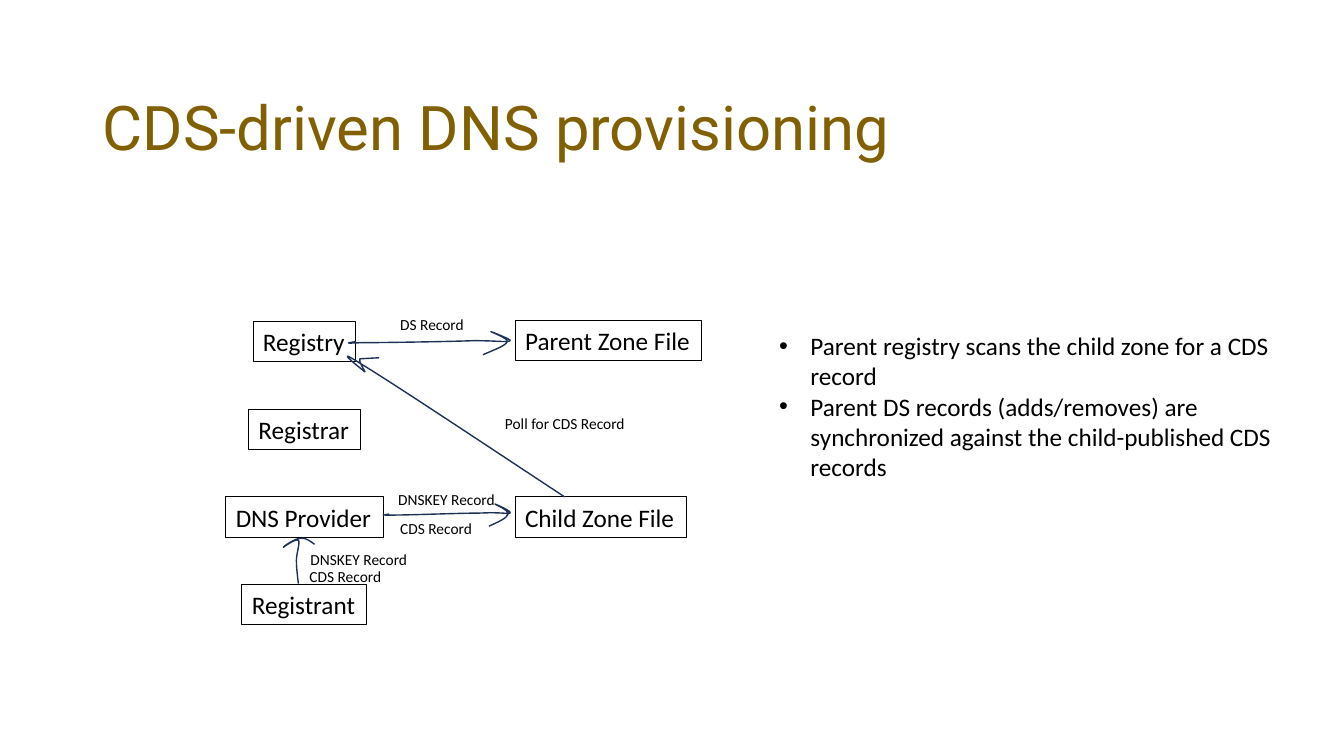
from dataclasses import dataclass

import pptx
import pptx.dml.color
import pptx.enum.shapes
import pptx.enum.text
import pptx.oxml
import pptx.oxml.ns
import pptx.util

COLORS = {"title": "806000", "text": "000000", "border": "000000", "arrow": "1E3256"}
BODY_FONT = "Calibri"
SLIDE_WIDTH, SLIDE_HEIGHT = 13.33, 7.5

# Diagram grid, in inches
FIRST_ROW, ROW_STEP = 3.19, 0.87
ACTOR_CENTER, ZONE_LEFT = 3.02, 5.11
BOX_HEIGHT, LABEL_HEIGHT = 0.4, 0.29
CURVE_STEPS = 12

Point = tuple[float, float]


@dataclass(frozen=True)
class Item:
    text: str
    row: float
    left: float
    width: float


def actor(text: str, row: int, width: float) -> Item:
    """A box centred on the actor column."""
    return Item(text, row, ACTOR_CENTER - width / 2, width)


BOXES = [
    Item("Parent Zone File", -0.01, ZONE_LEFT, 1.85),
    actor("Registry", 0, 1.02),
    actor("Registrar", 1, 1.11),
    actor("DNS Provider", 2, 1.56),
    actor("Registrant", 3, 1.24),
    Item("Child Zone File", 2, ZONE_LEFT, 1.7),
]

LABELS = [
    Item("DNSKEY Record", 1.87, 3.85, 1.17),
    Item("DNSKEY Record", 2.55, 2.98, 1.17),
    Item("CDS Record", 2.74, 2.97, 0.93),
    Item("CDS Record", 2.2, 3.87, 0.93),
    Item("Poll for CDS Record", 1, 4.91, 1.41),
    Item("DS Record", -0.13, 3.87, 0.84),
]

# Hand-drawn arrows: a start point, then three Bezier points per curve
ARROWS: list[list[Point]] = [
    [  # Registrant to DNS Provider
        (2.96, 5.79),
        (2.95, 5.71), (2.94, 5.63), (2.94, 5.56),
        (2.94, 5.49), (2.98, 5.38), (2.96, 5.36),
        (2.93, 5.34), (2.81, 5.43), (2.81, 5.43),
        (2.81, 5.42), (2.93, 5.34), (2.98, 5.34),
        (3.03, 5.33), (3.08, 5.37), (3.12, 5.4),
    ],
    [  # DNS Provider to Child Zone File
        (3.86, 5.1),
        (3.8, 5.11), (3.75, 5.11), (3.9, 5.11),
        (4.06, 5.11), (4.58, 5.09), (4.77, 5.09),
        (4.97, 5.08), (5.03, 5.1), (5.06, 5.09),
        (5.08, 5.07), (4.91, 5), (4.91, 5),
        (4.9, 5), (5.05, 5.06), (5.04, 5.1),
        (5.03, 5.14), (4.94, 5.18), (4.85, 5.22),
    ],
    [  # Child Zone File to Registry
        (3.76, 3.55),
        (3.76, 3.55), (3.57, 3.56), (3.57, 3.56),
        (3.55, 3.58), (3.62, 3.68), (3.62, 3.69),
        (3.62, 3.69), (3.25, 3.4), (3.58, 3.61),
        (3.91, 3.81), (4.75, 4.37), (5.6, 4.93),
    ],
    [  # Registry to Parent Zone File
        (3.53, 3.39),
        (3.46, 3.4), (3.39, 3.41), (3.58, 3.4),
        (3.78, 3.4), (4.45, 3.39), (4.7, 3.38),
        (4.94, 3.38), (5.03, 3.4), (5.06, 3.38),
        (5.08, 3.37), (4.87, 3.29), (4.87, 3.29),
        (4.86, 3.29), (5.05, 3.36), (5.03, 3.39),
        (5.02, 3.43), (4.9, 3.47), (4.79, 3.52),
    ],
]

BULLETS = [
    "Parent registry scans the child zone for a CDS record",
    "Parent DS records (adds/removes) are synchronized against the child-published CDS records",
]


def color(name: str) -> pptx.dml.color.RGBColor:
    return pptx.dml.color.RGBColor.from_string(COLORS[name])


def inches(*lengths: float) -> list[pptx.util.Length]:
    return [pptx.util.Inches(length) for length in lengths]


def element(markup: str):
    """Parse one drawing element such as 'buChar char="•"'."""
    tag, _, rest = markup.partition(" ")
    return pptx.oxml.parse_xml(f"<a:{tag} {pptx.oxml.ns.nsdecls('a')} {rest}/>")


def row_top(row: float) -> float:
    return FIRST_ROW + row * ROW_STEP


def format_paragraph(paragraph, size: float, font: str = BODY_FONT, fill: str = "text") -> None:
    paragraph.alignment = pptx.enum.text.PP_ALIGN.LEFT
    paragraph.font.size = pptx.util.Pt(size)
    paragraph.font.name = font
    paragraph.font.color.rgb = color(fill)


def write_line(shape, text: str, size: float) -> None:
    frame = shape.text_frame
    frame.text = text
    frame.word_wrap = False
    frame.auto_size = pptx.enum.text.MSO_AUTO_SIZE.SHAPE_TO_FIT_TEXT
    frame.vertical_anchor = pptx.enum.text.MSO_ANCHOR.TOP
    format_paragraph(frame.paragraphs[0], size)


def outline(shape, line: str, width: float) -> None:
    shape.shadow.inherit = False
    shape.fill.background()
    shape.line.color.rgb = color(line)
    shape.line.width = pptx.util.Pt(width)


def add_title(slide, text: str) -> None:
    title = slide.shapes.title
    title.left, title.top, title.width, title.height = inches(0.92, 0.57, 11.5, 1.45)
    frame = title.text_frame
    frame.text = text
    frame.auto_size = pptx.enum.text.MSO_AUTO_SIZE.NONE
    frame.vertical_anchor = pptx.enum.text.MSO_ANCHOR.MIDDLE
    format_paragraph(frame.paragraphs[0], 44, "Roboto", "title")
    frame.paragraphs[0].line_spacing = 0.9


def add_box(slide, item: Item) -> None:
    frame = inches(item.left, row_top(item.row), item.width, BOX_HEIGHT)
    box = slide.shapes.add_shape(pptx.enum.shapes.MSO_SHAPE.RECTANGLE, *frame)
    outline(box, "border", 0.75)
    write_line(box, item.text, 18)


def add_label(slide, item: Item) -> None:
    frame = inches(item.left, row_top(item.row), item.width, LABEL_HEIGHT)
    write_line(slide.shapes.add_textbox(*frame), item.text, 11)


def curve_samples(curve: list[Point]) -> list[list[pptx.util.Length]]:
    """Points along one cubic curve."""
    samples = []
    for step in range(CURVE_STEPS + 1):
        t = step / CURVE_STEPS
        u = 1 - t
        weights = (u**3, 3 * u * u * t, 3 * u * t * t, t**3)
        samples.append(inches(*(sum(w * v for w, v in zip(weights, axis)) for axis in zip(*curve))))
    return samples


def add_arrow(slide, points: list[Point]) -> None:
    # Samples fix the bounds of the shape, then true curves become its outline
    curves = [points[first:first + 4] for first in range(0, len(points) - 1, 3)]
    builder = slide.shapes.build_freeform(*inches(*points[0]))
    for curve in curves:
        builder.add_line_segments(curve_samples(curve), close=False)
    arrow = builder.convert_to_shape()
    contour = next(arrow._element.iter(pptx.oxml.ns.qn("a:path")))
    for segment in list(contour):
        contour.remove(segment)
    for tag, group in [("moveTo", points[:1])] + [("cubicBezTo", curve[1:]) for curve in curves]:
        segment = element(tag)
        for x, y in (inches(*point) for point in group):
            segment.append(element(f'pt x="{x - arrow.left}" y="{y - arrow.top}"'))
        contour.append(segment)
    outline(arrow, "arrow", 1)


def add_bullets(slide, texts: list[str]) -> None:
    frame = slide.shapes.add_textbox(*inches(7.63, 3.23, 5.22, 1.62)).text_frame
    frame.word_wrap = True
    frame.text = "\n".join(texts)
    indent = pptx.util.Inches(0.31)
    for paragraph in frame.paragraphs:
        format_paragraph(paragraph, 18)
        properties = paragraph._p.get_or_add_pPr()
        properties.set("marL", str(indent))
        properties.set("indent", str(-indent))
        properties.append(element('buFont typeface="Arial"'))
        properties.append(element('buChar char="•"'))


def main() -> None:
    presentation = pptx.Presentation()
    presentation.slide_width, presentation.slide_height = inches(SLIDE_WIDTH, SLIDE_HEIGHT)
    slide = presentation.slides.add_slide(presentation.slide_layouts[5])
    add_title(slide, "CDS-driven DNS provisioning")
    for box in BOXES:
        add_box(slide, box)
    for points in ARROWS:
        add_arrow(slide, points)
    for label in LABELS:
        add_label(slide, label)
    add_bullets(slide, BULLETS)
    presentation.save("out.pptx")


if __name__ == "__main__":
    main()
